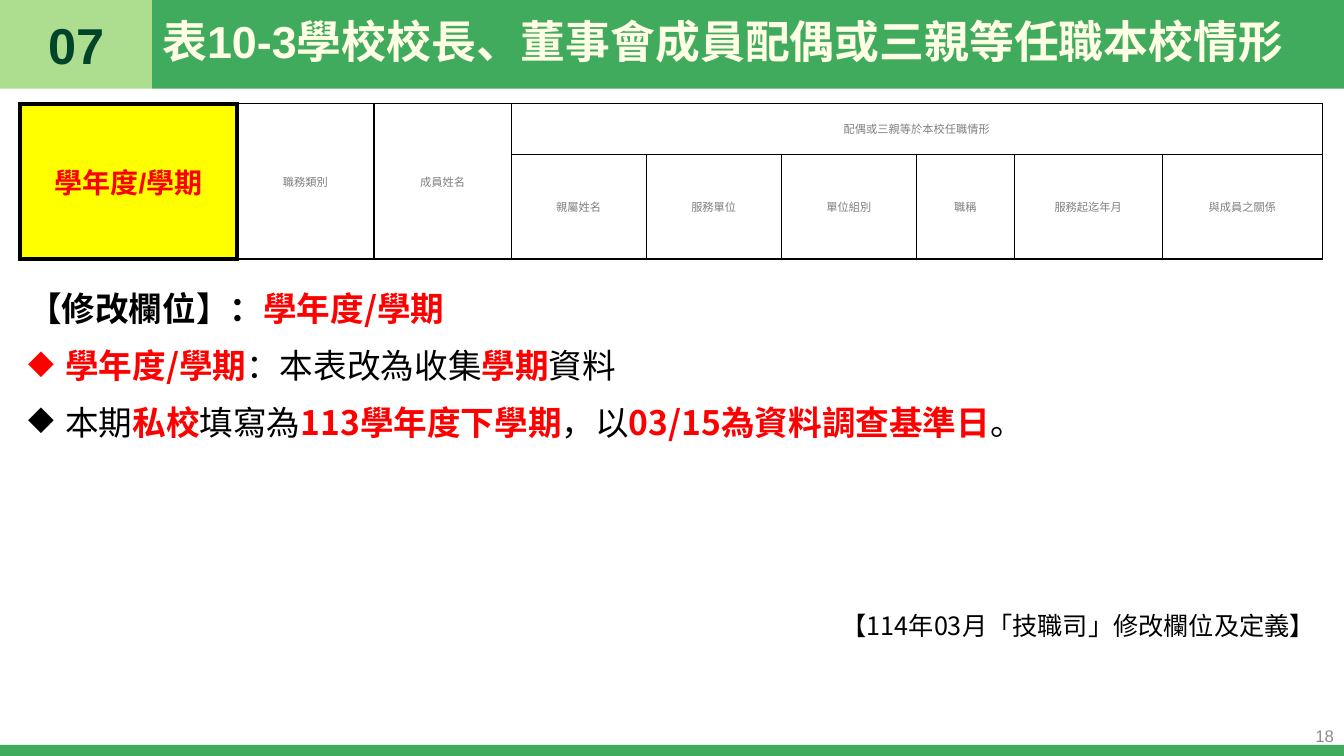
import pptx
import pptx.util
import pptx.dml.color
import pptx.enum.shapes
import pptx.enum.text
import pptx.oxml
import pptx.oxml.ns

PX = 9144  # EMU per px, 100 px to the inch
COLORS = {
    "green": "41AB5D", "light": "ADDD8E", "dark": "004529", "cream": "FFFFE5",
    "red": "FF0000", "yellow": "FFFF00", "black": "000000",
    "gray": "808080", "number": "8C8C8C",
}
CJK = "Noto Sans CJK SC"
ALIGN = pptx.enum.text.PP_ALIGN
ANCHOR = pptx.enum.text.MSO_ANCHOR
COLUMNS = [215, 136, 136, 134, 134, 134, 97, 147, 159]
ROWS = [50, 104]
HEADERS = ["職務類別", "成員姓名"]
SUBHEADERS = ["親屬姓名", "服務單位", "單位組別", "職稱", "服務起迄年月", "與成員之關係"]


def emu(*lengths):
    return [pptx.util.Emu(n * PX) for n in lengths]


def rgb(color):
    return pptx.dml.color.RGBColor.from_string(COLORS[color])


def add_run(p, text, size, color, bold=False, font="Arial"):
    r = p.add_run()
    r.text = text
    r.font.size = pptx.util.Pt(size)
    r.font.bold = bold
    r.font.name = font
    r.font.color.rgb = rgb(color)
    ea = pptx.oxml.parse_xml(f'<a:ea {pptx.oxml.ns.nsdecls("a")} typeface="{CJK}"/>')
    r.font._element.find(pptx.oxml.ns.qn("a:latin")).addnext(ea)


def add_bar(s, box, color):
    sp = s.shapes.add_shape(pptx.enum.shapes.MSO_SHAPE.RECTANGLE, *emu(*box))
    sp.shadow.inherit = False
    sp.fill.solid()
    sp.fill.fore_color.rgb = rgb(color)
    sp.line.fill.background()


def add_box(s, box, anchor=ANCHOR.MIDDLE):
    tf = s.shapes.add_textbox(*emu(*box)).text_frame
    tf.word_wrap = True
    tf.vertical_anchor = anchor
    return tf


def add_label(s, box, text, size, color, align, bold=False, spacing=1.0):
    p = add_box(s, box).paragraphs[0]
    p.alignment = align
    p.line_spacing = spacing
    add_run(p, text, size, color, bold)


def add_paragraph(tf, runs, size=24, spacing=1.1, before=6, bullet=False,
                  align=ALIGN.LEFT):
    p = tf.paragraphs[0] if not tf.paragraphs[0].runs else tf.add_paragraph()
    p.alignment = align
    p.line_spacing = spacing
    p.space_before = pptx.util.Pt(before)
    if bullet:
        pPr = p._p.get_or_add_pPr()
        pPr.set("marL", str(37 * PX))
        pPr.set("indent", str(-37 * PX))
        pPr.append(pptx.oxml.parse_xml(
            f'<a:buChar {pptx.oxml.ns.nsdecls("a")} char="◆"/>'))
    for text, color, bold in runs:
        add_run(p, text, size, color, bold, CJK)


def set_borders(cell, **widths):
    tcPr = cell._tc.get_or_add_tcPr()
    for side in "LRTB":
        width = pptx.util.Pt(widths.get(side, 1))
        tcPr.append(pptx.oxml.parse_xml(
            f'<a:ln{side} {pptx.oxml.ns.nsdecls("a")} w="{width}"><a:solidFill>'
            f'<a:srgbClr val="{COLORS["black"]}"/></a:solidFill></a:ln{side}>'))


def fill_cell(cell, text, size=8, color="gray", bold=False):
    cell.vertical_anchor = ANCHOR.MIDDLE
    p = cell.text_frame.paragraphs[0]
    p.alignment = ALIGN.CENTER
    add_run(p, text, size, color, bold)


def add_field_table(s):
    frame = s.shapes.add_table(len(ROWS), len(COLUMNS),
                               *emu(20, 103, sum(COLUMNS), sum(ROWS)))
    table = frame.table
    table.first_row = table.horz_banding = False
    for column, width in zip(table.columns, emu(*COLUMNS)):
        column.width = width
    for row, height in zip(table.rows, emu(*ROWS)):
        row.height = height

    # Borders, fills and margins; the first column is the highlighted one
    for i in range(len(ROWS)):
        for j in range(len(COLUMNS)):
            cell = table.cell(i, j)
            cell.margin_left, cell.margin_right = emu(2, 2)
            cell.margin_top = cell.margin_bottom = 0
            if j == 0:
                set_borders(cell, L=3, R=3, T=3, B=3)
                cell.fill.solid()
                cell.fill.fore_color.rgb = rgb("yellow")
            else:
                set_borders(cell, L=3 if j == 1 else 1)
                cell.fill.background()

    # Merged headings
    for j in range(3):
        table.cell(0, j).merge(table.cell(1, j))
    table.cell(0, 3).merge(table.cell(0, 8))

    # Cell text
    fill_cell(table.cell(0, 0), "學年度/學期", 20, "red", True)
    for j, text in enumerate(HEADERS, 1):
        fill_cell(table.cell(0, j), text)
    fill_cell(table.cell(0, 3), "配偶或三親等於本校任職情形")
    for j, text in enumerate(SUBHEADERS, 3):
        fill_cell(table.cell(1, j), text)


def add_notes_text(s):
    tf = add_box(s, (18, 277, 1296, 473), ANCHOR.TOP)
    add_paragraph(tf, [("【修改欄位】：", "black", True), ("學年度/學期", "red", True)])
    add_paragraph(tf, [
        ("學年度/學期", "red", True), ("：本表改為收集", "black", False),
        ("學期", "red", True), ("資料", "black", False),
    ], spacing=1.2, bullet=True)
    add_paragraph(tf, [
        ("本期", "black", False), ("私校", "red", True),
        ("填寫為", "black", False), ("113學年度下學期", "red", True),
        ("，以", "black", False), ("03/15為資料調查基準日", "red", True),
        ("。", "black", False),
    ], spacing=1.2, bullet=True)
    add_paragraph(tf, [("【114年03月「技職司」修改欄位及定義】", "black", False)],
                  size=18, before=118, align=ALIGN.RIGHT)


def main():
    prs = pptx.Presentation()
    prs.slide_width, prs.slide_height = emu(1333, 750)
    s = prs.slides.add_slide(prs.slide_layouts[6])

    # Bands
    add_bar(s, (0, 739, 1333, 11), "green")
    add_bar(s, (0, 0, 151, 88), "light")
    add_bar(s, (151, 0, 1182, 88), "green")

    # Title, page number and section number
    add_label(s, (151, 0, 1162, 88), "表10-3學校校長、董事會成員配偶或三親等任職本校情形",
              32, "cream", ALIGN.LEFT, True, 0.9)
    add_label(s, (1033, 710, 300, 40), "18", 12, "number", ALIGN.RIGHT)
    add_label(s, (0, 0, 151, 88), "07", 36, "dark", ALIGN.CENTER, True)

    # Content
    add_notes_text(s)
    add_field_table(s)
    prs.save("out.pptx")


if __name__ == "__main__":
    main()
